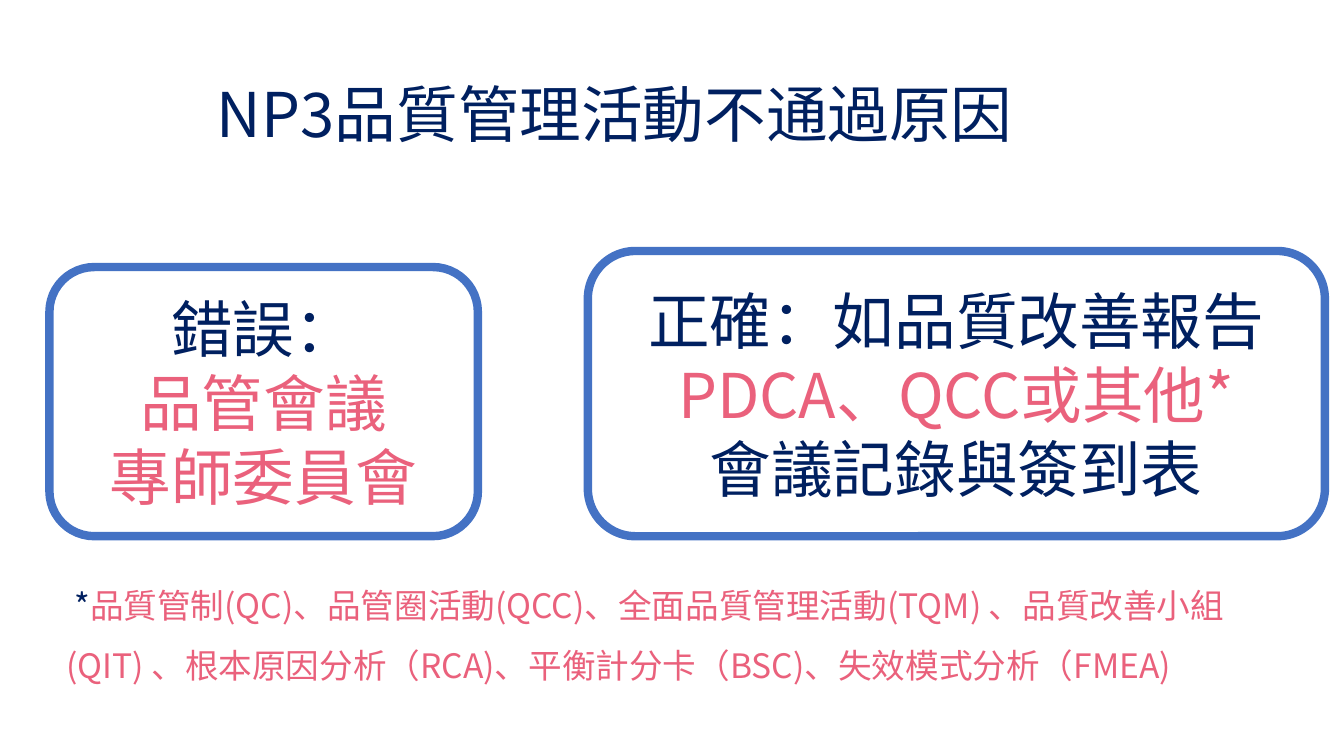
from lxml.etree import SubElement
from pptx import Presentation
from pptx.dml.color import RGBColor
from pptx.enum.shapes import MSO_SHAPE
from pptx.enum.text import MSO_ANCHOR, PP_ALIGN
from pptx.oxml.ns import qn
from pptx.util import Inches, Pt

FONT = "Noto Sans CJK JP"
NAVY, PINK, BLUE, WHITE = "002060", "EA617C", "4472C4", "FFFFFF"
WIDTH, HEIGHT = Inches(13.33), Inches(7.5)

TITLE_BOX = (2.63, 5.87, 86.27, 19.33)
WRONG_BOX = (3.68, 35.33, 31.88, 35.6)
CORRECT_BOX = (43.74, 33.2, 54.84, 37.73)
NOTE_BOX = (4.2, 74, 94.37, 16.67)

TITLE = [[("NP3品質管理活動不通過原因", NAVY)]]
WRONG = [[("錯誤：", NAVY)], [("品管會議", PINK)], [("專師委員會", PINK)]]
CORRECT = [
    [("正確：如品質改善報告", NAVY), ("PDCA、QCC或其他*", PINK)],
    [("會議記錄與簽到表", NAVY)],
]
NOTE = [[
    ("*", NAVY),
    ("品質管制(QC)、品管圈活動(QCC)、全面品質管理活動(TQM) 、品質改善小組(QIT) 、"
     "根本原因分析（RCA)、平衡計分卡（BSC)、失效模式分析（FMEA)", PINK),
]]


def color(value):
    return RGBColor.from_string(value)


def place(box):
    left, top, width, height = box
    return [int(share * side / 100) for share, side in
            ((left, WIDTH), (top, HEIGHT), (width, WIDTH), (height, HEIGHT))]


def set_format(target, values):
    for name, value in values.items():
        setattr(target, name, value)


def write_text(frame, paragraphs, size, anchor, paragraph_format):
    set_format(frame, {"word_wrap": True, "vertical_anchor": anchor})
    for index, runs in enumerate(paragraphs):
        paragraph = frame.add_paragraph() if index else frame.paragraphs[0]
        set_format(paragraph, paragraph_format)
        for text, run_color in runs:
            run = paragraph.add_run()
            run.text = text
            set_format(run.font, {"name": FONT, "size": Pt(size)})
            run.font.color.rgb = color(run_color)
            SubElement(run.font._element, qn("a:ea"), typeface=FONT)


def add_title(slide, box):
    title = slide.shapes.title
    set_format(title, dict(zip(("left", "top", "width", "height"), place(box))))
    write_text(title.text_frame, TITLE, 44, MSO_ANCHOR.MIDDLE,
               {"alignment": PP_ALIGN.CENTER, "line_spacing": 0.9})


def add_panel(slide, box, paragraphs):
    shape = slide.shapes.add_shape(MSO_SHAPE.ROUNDED_RECTANGLE, *place(box))
    shape.shadow.inherit = False
    shape.fill.solid()
    shape.fill.fore_color.rgb = color(WHITE)
    shape.line.color.rgb = color(BLUE)
    shape.line.width = Pt(6)
    write_text(shape.text_frame, paragraphs, 44, MSO_ANCHOR.MIDDLE,
               {"alignment": PP_ALIGN.CENTER})


def add_note(slide, box):
    shape = slide.shapes.add_textbox(*place(box))
    write_text(shape.text_frame, NOTE, 24, MSO_ANCHOR.TOP, {"line_spacing": 1.5})
    properties = shape.text_frame.paragraphs[0]._p.get_or_add_pPr()
    properties.set("indent", str(Inches(0.08)))


def main():
    presentation = Presentation()
    set_format(presentation, {"slide_width": WIDTH, "slide_height": HEIGHT})
    slide = presentation.slides.add_slide(presentation.slide_layouts[5])
    add_title(slide, TITLE_BOX)
    add_panel(slide, WRONG_BOX, WRONG)
    add_panel(slide, CORRECT_BOX, CORRECT)
    add_note(slide, NOTE_BOX)
    presentation.save("out.pptx")


if __name__ == "__main__":
    main()
